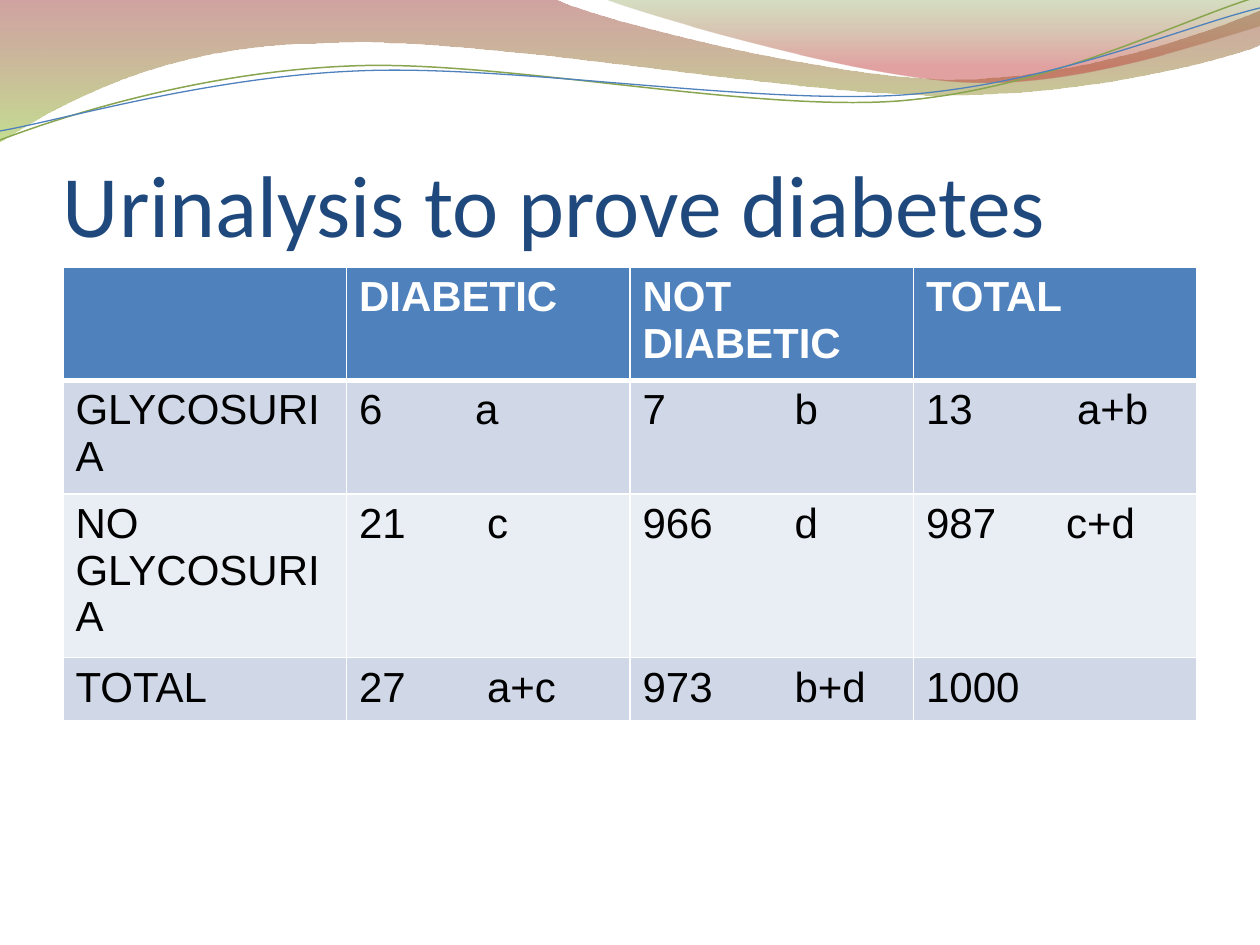
from lxml.etree import SubElement
from pptx import Presentation
from pptx.dml.color import RGBColor
from pptx.enum.text import MSO_ANCHOR as Anchor
from pptx.oxml.ns import qn
from pptx.util import Pt

PX = 914400 / 126  # EMU in one px


def emu(px):
    return round(px * PX)


def color(value):
    return RGBColor.from_string(value)


deck = Presentation()
deck.slide_width, deck.slide_height = emu(1260), emu(945)
page = deck.slides.add_slide(deck.slide_layouts[6])

# Waves along the top: a step is a line end (x, y) or a Bezier (two handles, end)
waves = [
    {"start": (0, -1), "closed": True,
     "steps": [(554, -1), (600, 21, 837, 79, 955, 79), (1075, 79, 1207, 33, 1260, 11),
               (1261, 45), (1239, 55, 1096, 96, 940, 95), (784, 95, 481, 35, 324, 43),
               (163, 44, 58, 105, -1, 142), (0, -1)],
     "stops": [(0, "973330", 45), (1, "95C238", 55)]},
    {"start": (604, -1), "closed": True,
     "steps": [(641, 14, 859, 78, 969, 82), (1079, 87, 1211, 40, 1260, 26), (1260, 0),
               (604, -1)],
     "stops": [(0, "769537", 30), (0.8, "BE3330", 45)]},
    {"start": (0, 140), "closed": False,
     "steps": [(60, 117, 199, 72, 349, 66), (498, 59, 747, 112, 898, 101),
               (1050, 89, 1182, 19, 1257, -3)],
     "line": ("89A54F", 0.85)},
    {"start": (0, 131), "closed": False,
     "steps": [(59, 121, 207, 77, 357, 71), (508, 64, 752, 105, 903, 95),
               (1053, 84, 1185, 26, 1260, 8)],
     "line": ("4F81BD", 0.75)},
]
for wave in waves:
    steps = wave["steps"]
    builder = page.shapes.build_freeform(*map(emu, wave["start"]))
    builder.add_line_segments([(emu(step[-2]), emu(step[-1])) for step in steps],
                              close=wave["closed"])
    shape = builder.convert_to_shape()
    shape.shadow.inherit = False
    # Bend the segments that have handles
    for segment, step in zip(list(shape._element.iter(qn("a:lnTo"))), steps):
        if len(step) == 6:
            segment.remove(segment[0])
            curve = SubElement(segment.getparent(), qn("a:cubicBezTo"))
            for x, y in zip(step[::2], step[1::2]):
                SubElement(curve, qn("a:pt"), x=str(emu(x) - shape.left),
                           y=str(emu(y) - shape.top))
            segment.getparent().replace(segment, curve)
    if wave["closed"]:
        shape.line.fill.background()
        shape.fill.gradient()
        shape.fill.gradient_angle = 270
        for stop, (position, value, opacity) in zip(shape.fill.gradient_stops, wave["stops"]):
            stop.position = position
            stop.color.rgb = color(value)
            tint = stop._gs.find(qn("a:srgbClr"))
            SubElement(tint, qn("a:alpha"), val=str(opacity * 1000))
    else:
        shape.fill.background()
        value, width = wave["line"]
        shape.line.color.rgb = color(value)
        shape.line.width = Pt(width)

# Title
box = page.shapes.add_textbox(emu(63), emu(97), emu(1134), emu(158))
frame = box.text_frame
frame_format = {"word_wrap": True, "vertical_anchor": Anchor.BOTTOM, "margin_left": 0,
                "margin_right": 0, "margin_top": emu(6), "margin_bottom": 0}
for name, value in frame_format.items():
    setattr(frame, name, value)
span = frame.paragraphs[0].add_run()
span.text = "Urinalysis to prove diabetes"
for name, value in {"name": "Calibri", "size": Pt(50)}.items():
    setattr(span.font, name, value)
span.font.color.rgb = color("1F497D")

# Table: a count and its letter are parted by a tab; rows grow with their text
rows = [
    ["", "DIABETIC", "NOT DIABETIC", "TOTAL"],
    ["GLYCOSURIA", "6\ta", "7\tb", "13\ta+b"],
    ["NO GLYCOSURIA", "21\tc", "966\td", "987\tc+d"],
    ["TOTAL", "27\ta+c", "973\tb+d", "1000"],
]
row_fills = ["4F81BD", "D0D8E8", "E9EDF4", "D0D8E8"]
tab_stops = [[], [0, 116, 152, 151], [0, 128, 152, 140], [0, 128, 152, 0]]
table = page.shapes.add_table(4, 4, emu(63), emu(267), emu(1134), emu(4 * 52)).table
table.horz_banding = False
for r, texts in enumerate(rows):
    header = r == 0
    for c, text in enumerate(texts):
        cell = table.cell(r, c)
        # White borders, thicker under the header
        thick = {"lnB"} if header else {"lnT"} if r == 1 else set()
        for side in ("lnL", "lnR", "lnT", "lnB"):
            width = Pt(3 if side in thick else 1)
            edge = SubElement(cell._tc.get_or_add_tcPr(), qn(f"a:{side}"), w=str(width))
            SubElement(SubElement(edge, qn("a:solidFill")), qn("a:srgbClr"), val="FFFFFF")
        cell.fill.solid()
        cell.fill.fore_color.rgb = color(row_fills[r])
        if not text:
            continue
        para = cell.text_frame.paragraphs[0]
        if "\t" in text:
            tabs = SubElement(para._p.get_or_add_pPr(), qn("a:tabLst"))
            SubElement(tabs, qn("a:tab"), pos=str(emu(tab_stops[r][c])), algn="l")
        span = para.add_run()
        span.text = text
        for name, value in {"name": "Arial", "size": Pt(24), "bold": header}.items():
            setattr(span.font, name, value)
        span.font.color.rgb = color("FFFFFF" if header else "000000")

deck.save("out.pptx")
